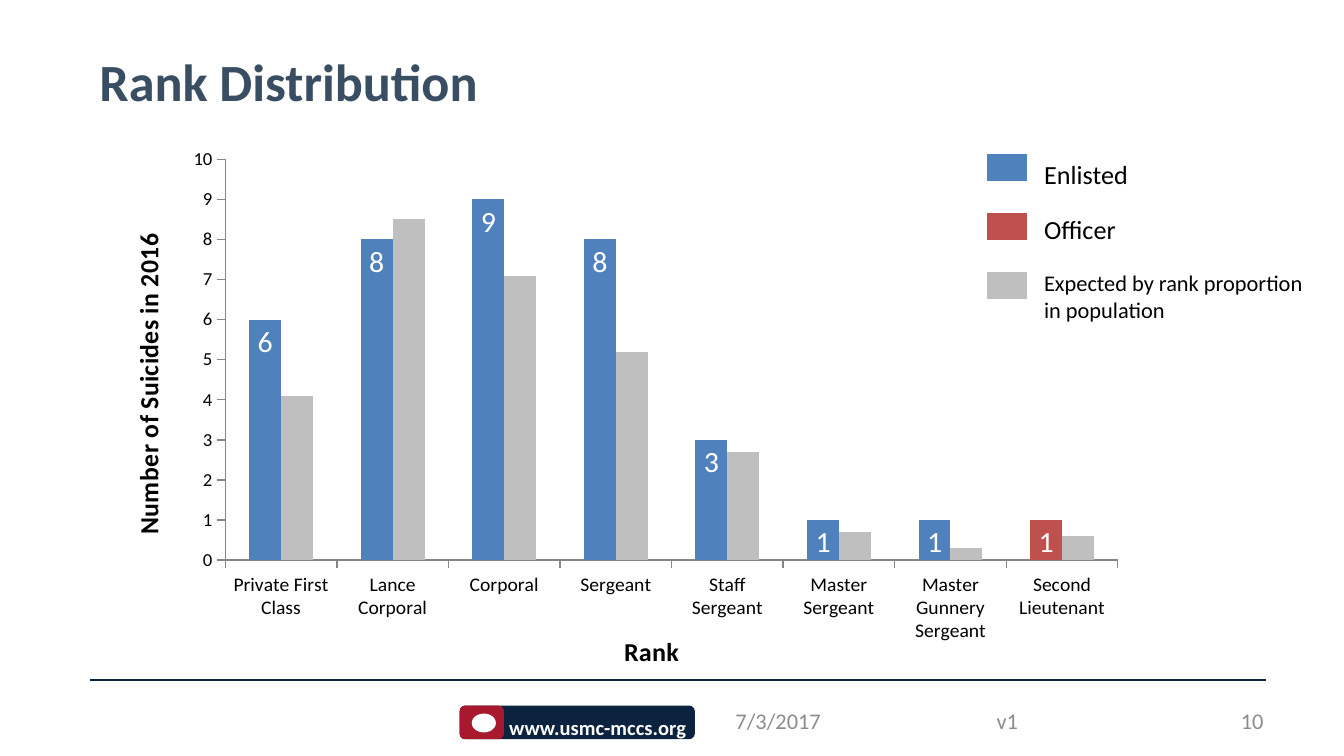
"""Build the rank distribution slide."""
from dataclasses import dataclass

from lxml import etree
from pptx import Presentation
from pptx import util as u
from pptx.chart.data import CategoryChartData
from pptx.dml.color import RGBColor
from pptx.enum import chart as ch, shapes, text
from pptx.oxml.ns import qn

W = 10
H = W * 9 / 16
FONT = "Calibri"
NAVY, CRIMSON, SLATE, AXIS, MUTED = "0C2340", "A9192E", "394E62", "868686", "8C8C8C"
BLUE, RED, GRAY, WHITE, BLACK = "4F81BD", "C0504D", "BFBFBF", "FFFFFF", "000000"
LEFT, RIGHT = 0.67, 9.42
LEGEND_TOP, LEGEND_STEP = 1.13, 0.44
ALIGN = text.PP_ALIGN


@dataclass
class Line:
    """One paragraph with its format."""
    text: str
    size: float
    color: str = BLACK
    bold: bool = False
    align: ALIGN = ALIGN.LEFT
    before: float = 0


@dataclass
class Series:
    """One column series of the chart."""
    name: str
    values: tuple
    color: str


LEGEND = [
    (BLUE, Line("Enlisted", 14)),
    (RED, Line("Officer", 14, before=12.8)),
    (GRAY, Line("Expected by rank proportion in population", 12, before=12.8)),
]
FOOTER = [
    (5.25, 1.08, Line("7/3/2017", 12, MUTED, align=ALIGN.CENTER)),
    (6.33, 2.33, Line("v1", 12, MUTED, align=ALIGN.CENTER)),
    (8.67, 0.83, Line("10", 12, MUTED, align=ALIGN.RIGHT)),
]
RANKS = ["Private First Class", "Lance Corporal", "Corporal", "Sergeant", "Staff Sergeant",
         "Master Sergeant", "Master Gunnery Sergeant", "Second Lieutenant"]
SERIES = [
    Series("Series 1", (6, 8, 9, 8, 3, 1, 1, 1), BLUE),
    Series("Series 2", (4.1, 8.5, 7.1, 5.2, 2.7, 0.7, 0.3, 0.6), GRAY),
]


def rgb(color: str) -> RGBColor:
    """Turn a hex string into a colour."""
    return RGBColor.from_string(color)


def box(x: float, y: float, w: float, h: float) -> list:
    """Give a place and size in inches as lengths."""
    return [u.Inches(v) for v in (x, y, w, h)]


def set_attrs(obj, formats: dict) -> None:
    """Set each attribute of an object from a dict."""
    for name, value in formats.items():
        setattr(obj, name, value)


def set_font(font, size: float, color: str = BLACK, bold: bool = False) -> None:
    """Format a font."""
    set_attrs(font, {"name": FONT, "size": u.Pt(size), "bold": bold})
    font.color.rgb = rgb(color)


def write(tf, lines: list, **formats) -> None:
    """Fill a text frame with paragraphs."""
    set_attrs(tf, {"word_wrap": True, "auto_size": text.MSO_AUTO_SIZE.NONE, **formats})
    for i, line in enumerate(lines):
        p = tf.add_paragraph() if i else tf.paragraphs[0]
        p.alignment = line.align
        if line.before:
            p.space_before = u.Pt(line.before)
        r = p.add_run()
        r.text = line.text
        set_font(r.font, line.size, line.color, line.bold)


def add_text(s, place: list, lines: list, **formats) -> None:
    """Add a text box."""
    write(s.shapes.add_textbox(*place).text_frame, lines, **formats)


def add_block(s, kind, place: list, fill: str, edge: str = "") -> None:
    """Add a filled preset shape, with an edge if one is named."""
    sp = s.shapes.add_shape(kind, *place)
    sp.shadow.inherit = False
    sp.fill.solid()
    sp.fill.fore_color.rgb = rgb(fill)
    if edge:
        sp.line.color.rgb = rgb(edge)
        sp.line.width = u.Pt(2)
    else:
        sp.line.fill.background()


def add_rule(s, y: float) -> None:
    """Add the line above the footer."""
    sp = s.shapes.add_connector(shapes.MSO_CONNECTOR.STRAIGHT,
                                *[u.Inches(v) for v in (LEFT, y, RIGHT, y)])
    sp.line.color.rgb = rgb(NAVY)
    sp.line.width = u.Pt(0.75)
    etree.SubElement(sp._element.spPr, qn("a:effectLst"))


def set_layout(parent, index: int, values: dict) -> None:
    """Give a chart part a manual layout in shares of the chart."""
    old = parent.find(qn("c:layout"))
    if old is not None:
        parent.remove(old)
    layout = etree.Element(qn("c:layout"))
    manual = etree.SubElement(layout, qn("c:manualLayout"))
    for tag, value in values.items():
        etree.SubElement(manual, qn(f"c:{tag}")).set("val", str(value))
    parent.insert(index, layout)


def format_axis(axis, title: str, size: float, x: float, y: float) -> None:
    """Format an axis and place its title."""
    set_attrs(axis, {"has_major_gridlines": False, "major_tick_mark": ch.XL_TICK_MARK.OUTSIDE})
    axis.format.line.color.rgb = rgb(AXIS)
    set_font(axis.tick_labels.font, size)
    tf = axis.axis_title.text_frame
    tf.text = title
    set_font(tf.paragraphs[0].runs[0].font, 14, bold=True)
    set_layout(axis.axis_title._element, 1, {"xMode": "edge", "yMode": "edge", "x": x, "y": y})


def add_rank_chart(s) -> None:
    """Add the column chart of ranks."""
    data = CategoryChartData()
    data.categories = RANKS
    for item in SERIES:
        data.add_series(item.name, item.values)
    chart = s.shapes.add_chart(ch.XL_CHART_TYPE.COLUMN_CLUSTERED,
                               *box(LEFT, 0.88, RIGHT - LEFT, 4.15), data).chart
    set_attrs(chart, {"has_legend": False, "has_title": False})
    set_font(chart.font, 10)
    plot = chart.plots[0]
    set_attrs(plot, {"gap_width": 150, "overlap": 0, "vary_by_categories": False})
    for series, item in zip(plot.series, SERIES):
        series.format.fill.solid()
        series.format.fill.fore_color.rgb = rgb(item.color)
    actual = plot.series[0]
    officer = actual.points[len(RANKS) - 1].format.fill
    officer.solid()
    officer.fore_color.rgb = rgb(RED)
    labels = actual.data_labels
    set_attrs(labels, {"show_value": True, "position": ch.XL_LABEL_POSITION.INSIDE_END})
    set_font(labels.font, 16, WHITE)
    format_axis(chart.category_axis, "Rank", 10.5, 0.45, 0.93)
    format_axis(chart.value_axis, "Number of Suicides in 2016", 10, 0.03, 0.21)
    set_attrs(chart.value_axis, {"minimum_scale": 0, "maximum_scale": 10, "major_unit": 1})
    area = chart._chartSpace.find(".//" + qn("c:plotArea"))
    set_layout(area, 0, {"layoutTarget": "inner", "xMode": "edge", "yMode": "edge",
                         "x": 0.115, "y": 0.075, "w": 0.759, "h": 0.73})


def main() -> None:
    """Build and save the slide."""
    prs = Presentation()
    set_attrs(prs, {"slide_width": u.Inches(W), "slide_height": u.Inches(H)})
    s = prs.slides.add_slide(prs.slide_layouts[5])
    add_rule(s, 5.06)
    rounded = shapes.MSO_SHAPE.ROUNDED_RECTANGLE
    add_block(s, rounded, box(3.42, 5.25, 1.75, 0.25), NAVY)
    add_block(s, rounded, box(3.42, 5.25, 0.33, 0.25), CRIMSON)
    add_block(s, shapes.MSO_SHAPE.OVAL, box(3.51, 5.31, 0.18, 0.14), WHITE)
    add_text(s, box(3.69, 5.27, 1.83, 0.29), [Line("www.usmc-mccs.org", 11, WHITE, True)])
    for x, w, line in FOOTER:
        add_text(s, box(x, 5.21, w, 0.3), [line], vertical_anchor=text.MSO_ANCHOR.MIDDLE)
    add_rank_chart(s)
    title = s.shapes.title
    set_attrs(title, dict(zip(("left", "top", "width", "height"), box(0.63, 0.31, 5.62, 1.05))))
    write(title.text_frame, [Line("Rank Distribution", 28, SLATE, True)],
          vertical_anchor=text.MSO_ANCHOR.TOP, margin_left=u.Inches(0.11),
          margin_top=u.Inches(0.06))
    add_text(s, box(7.67, LEGEND_TOP, 2.17, 1.32), [line for _, line in LEGEND])
    for row, (color, _) in enumerate(LEGEND):
        place = box(7.33, LEGEND_TOP + row * LEGEND_STEP, 0.33, 0.23)
        add_block(s, shapes.MSO_SHAPE.RECTANGLE, place, color, WHITE)
    prs.save("out.pptx")


if __name__ == "__main__":
    main()
